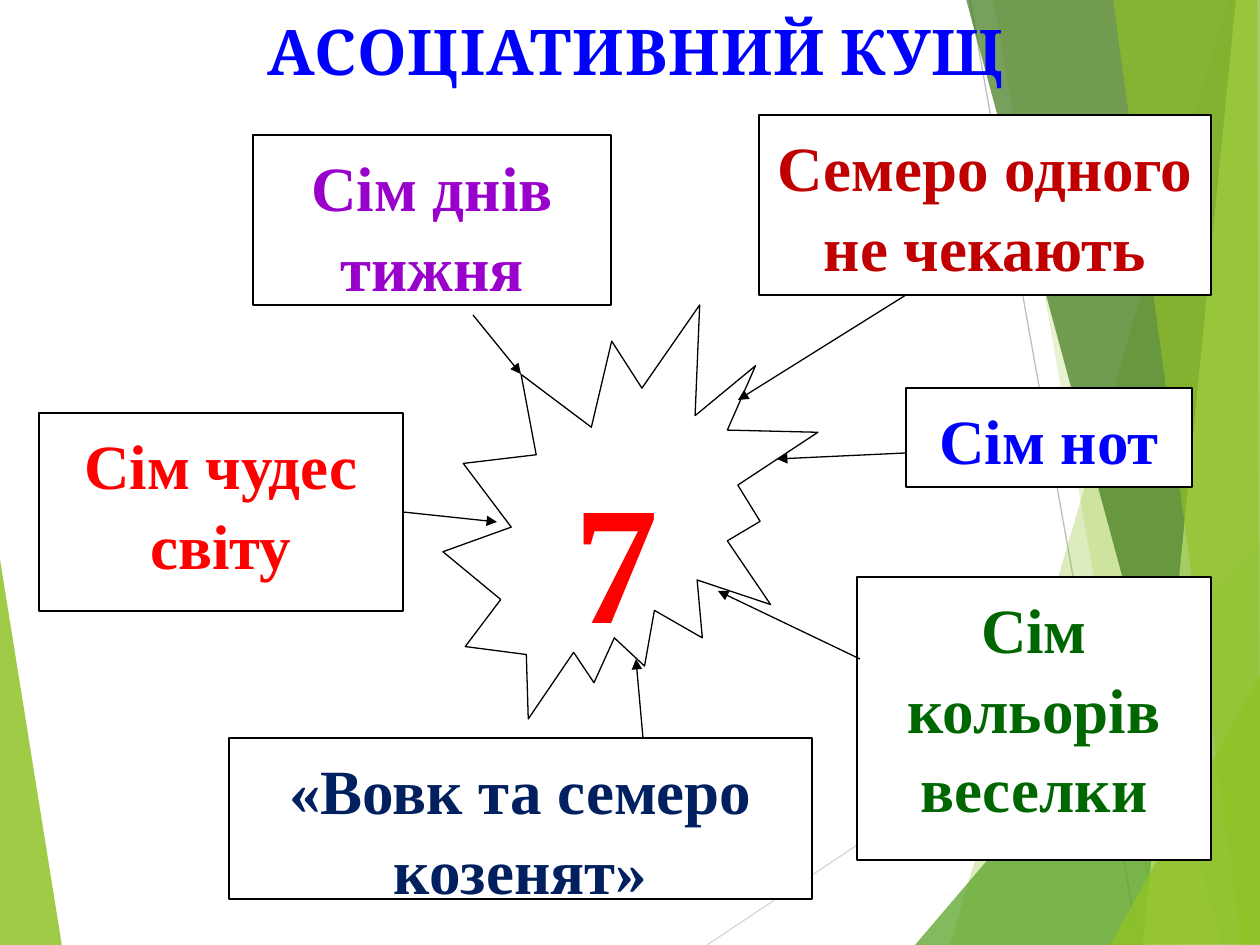
from lxml.etree import SubElement
from pptx import Presentation
from pptx.dml.color import RGBColor
from pptx.enum.shapes import MSO_CONNECTOR as Connector, MSO_SHAPE as Shape
from pptx.enum.text import MSO_ANCHOR as Anchor, PP_ALIGN as Align
from pptx.oxml.ns import qn
from pptx.util import Emu, Pt

WIDTH, HEIGHT = 1260, 945
RIGHT_SIDE = 3

# Facets: corner points, fill, opacity in percent
LEFT_FACET = ([(-1, 553), (62, 946), (-1, 945)], "90C226", 85)
RIGHT_FACETS = [
    ([(1228, 0), (950, 945), (1262, 946), (1261, 1)], "90C226", 30),
    ([(993, -1), (1158, 945), (1261, 945), (1261, -1)], "90C226", 20),
    ([(915, 945), (1260, 541), (1261, 945)], "54A021", 72),
    ([(966, -1), (1222, 945), (1261, 944), (1261, -1)], "3F7819", 70),
    ([(1236, -1), (1143, 945), (1261, 945), (1260, -1)], "C0E474", 70),
    ([(1113, -1), (1242, 945), (1260, 945), (1257, -1)], "90C226", 65),
    ([(1110, 945), (1261, 674), (1261, 944)], "90C226", 80),
]
THIN_LINES = [
    ((707, 945), (1261, 576), "D9D9D9"),
    ((970, 0), (1139, 945), "BFBFBF"),
]

# Associations: text, place, colour
ASSOCIATIONS = [
    ("«Вовк та семеро козенят»", (229, 738, 583, 161), "002060"),
    ("Сім днів тижня", (253, 135, 358, 170), "9900CC"),
    ("Сім чудес світу", (39, 413, 364, 198), "FF0000"),
    ("Сім нот", (906, 388, 286, 99), "0000FF"),
    ("Семеро одного не чекають", (759, 115, 452, 180), "C00000"),
    ("Сім кольорів веселки", (857, 577, 354, 283), "006600"),
]

# Arrows: start, end, name of the box whose right side is the start
ARROWS = [
    ((473, 315), (521, 374), None),
    ((906, 295), (738, 400), None),
    ((403, 512), (497, 522), "Сім чудес світу"),
    ((906, 453), (777, 459), None),
    ((643, 738), (636, 659), None),
    ((860, 659), (718, 591), None),
]


def px(length):
    return Emu(round(length * 914400 / 126))


def colour(value):
    return RGBColor.from_string(value)


def set_all(target, values):
    for name, value in values.items():
        setattr(target, name, value)


class SlideBuilder:
    ink = "000000"
    paper = "FFFFFF"
    line_width = Pt(0.75)
    text_font = "Times New Roman"
    title_font = "Cambria"

    def __init__(self, slide):
        self.slide = slide
        self.shapes = slide.shapes

    def add_text(self, frame, text, font, size, hue):
        para = frame.paragraphs[0]
        para.alignment = Align.CENTER
        span = para.add_run()
        span.text = text
        set_all(span.font, {"name": font, "size": Pt(size), "bold": True})
        span.font.color.rgb = colour(hue)
        return para

    def place(self, shape, bounds):
        names = ("left", "top", "width", "height")
        set_all(shape, dict(zip(names, map(px, bounds))))

    def title(self, text, bounds, hue):
        title = self.shapes.title
        self.place(title, bounds)
        # Bring the title in front of the facets
        self.shapes.element.append(title.element)
        frame = title.text_frame
        set_all(frame, {"word_wrap": True, "vertical_anchor": Anchor.TOP})
        self.add_text(frame, text, self.title_font, 36, hue)
        for properties in title.element.iter(qn("a:rPr")):
            properties.set("spc", "50")

    def facet(self, points, hue, opacity):
        corners = [(px(x), px(y)) for x, y in points]
        outline = self.shapes.build_freeform(*corners[0], scale=1.0)
        outline.add_line_segments(corners[1:], close=True)
        shape = outline.convert_to_shape()
        shape.shadow.inherit = False
        shape.fill.solid()
        shape.fill.fore_color.rgb = colour(hue)
        shape.line.fill.background()
        fill = shape.element.spPr.find(qn("a:solidFill"))
        SubElement(fill[0], qn("a:alpha"), val=str(opacity * 1000))

    def box(self, text, bounds, hue, kind=Shape.RECTANGLE, size=36, inset=10):
        shape = self.shapes.add_shape(kind, *map(px, bounds))
        shape.shadow.inherit = False
        shape.fill.solid()
        shape.fill.fore_color.rgb = colour(self.paper)
        shape.line.color.rgb = colour(self.ink)
        shape.line.width = self.line_width
        frame = shape.text_frame
        set_all(frame, {"word_wrap": True, "vertical_anchor": Anchor.TOP,
                        "margin_top": px(inset)})
        para = self.add_text(frame, text, self.text_font, size, hue)
        para.line_spacing = 1.05
        return shape

    def line(self, start, end, hue):
        line = self.shapes.add_connector(
            Connector.STRAIGHT, *map(px, start + end))
        line.line.color.rgb = colour(hue)
        line.line.width = self.line_width
        SubElement(line.element.spPr, qn("a:effectLst"))
        return line

    def arrow(self, start, end, source=None):
        """Draw an arrow, joined to the right side of source if given."""
        arrow = self.line(start, end, self.ink)
        outline = arrow.element.spPr.find(qn("a:ln"))
        SubElement(outline, qn("a:tailEnd"), type="triangle")
        if source is not None:
            arrow.begin_connect(source, RIGHT_SIDE)


def main():
    deck = Presentation()
    set_all(deck, {"slide_width": px(WIDTH), "slide_height": px(HEIGHT)})
    page = SlideBuilder(deck.slides.add_slide(deck.slide_layouts[5]))

    page.facet(*LEFT_FACET)
    for thin_line in THIN_LINES:
        page.line(*thin_line)
    for facet in RIGHT_FACETS:
        page.facet(*facet)

    page.title("АСОЦІАТИВНИЙ КУЩ", (6, 6, 1260, 90), "0000FF")
    boxes = {text: page.box(text, bounds, hue)
             for text, bounds, hue in ASSOCIATIONS}
    page.box("7", (443, 305, 375, 414), "FF0000",
             Shape.EXPLOSION2, size=96, inset=18)
    for start, end, source in ARROWS:
        page.arrow(start, end, boxes.get(source))

    deck.save("out.pptx")


if __name__ == "__main__":
    main()
